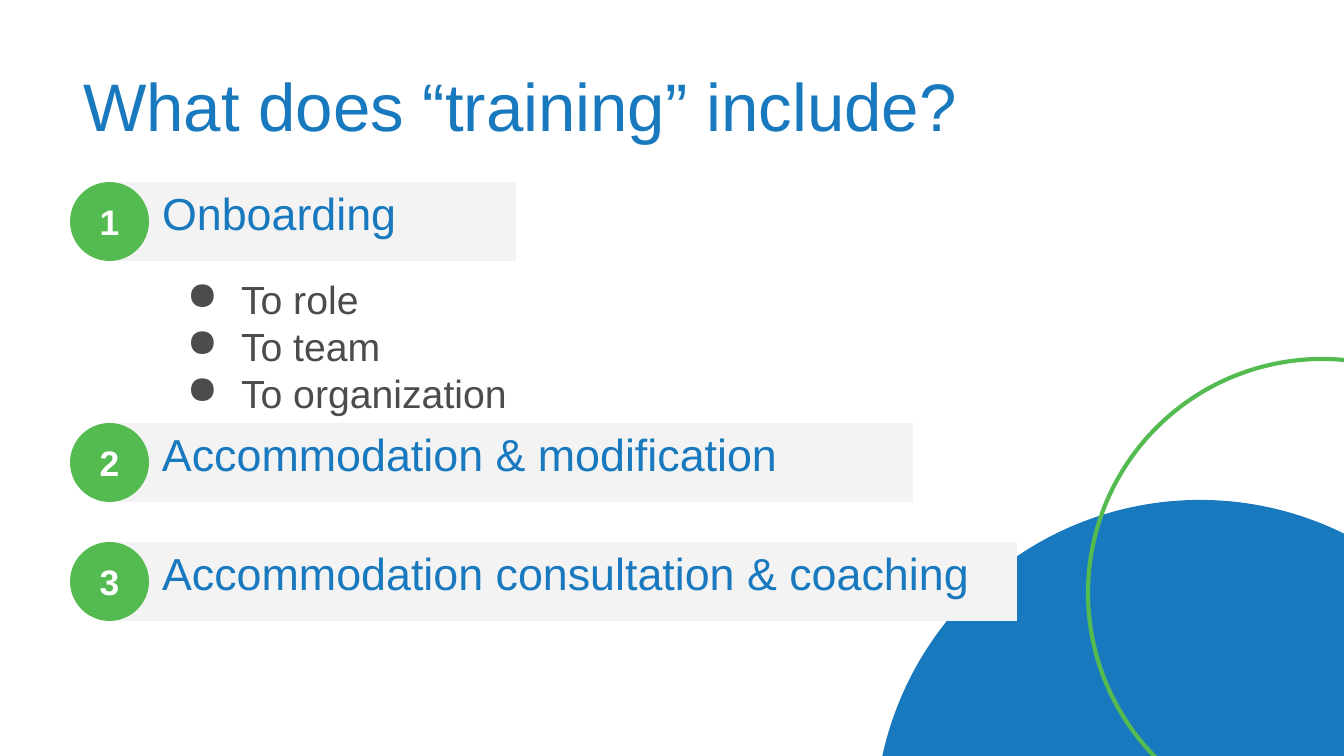
from lxml.etree import SubElement
from pptx import Presentation
from pptx.dml.color import RGBColor
from pptx.enum.shapes import MSO_SHAPE as Shape
from pptx.enum.text import MSO_ANCHOR as Anchor, PP_ALIGN as Align
from pptx.oxml.ns import qn
from pptx.util import Emu, Pt

PX = 9144000 / 1344
BLUE = RGBColor(0x19, 0x79, 0xBE)
GREEN = RGBColor(0x53, 0xBB, 0x50)
LIGHT = RGBColor(0xF3, 0xF3, 0xF3)
DARK = RGBColor(0x4C, 0x4C, 0x4E)
WHITE = RGBColor(0xFF, 0xFF, 0xFF)

BADGE = 79
ITEMS = [
    ("Onboarding", 182, 516),
    ("Accommodation & modification", 423, 913),
    ("Accommodation consultation & coaching", 542, 1017),
]
TOPICS = ["To role", "To team", "To organization"]


def px(n):
    """Turn pixels into EMU."""
    return Emu(round(n * PX))


def add_shape(s, kind, box, fill=None, line=None):
    """Add a flat preset shape with an optional fill and outline."""
    sp = s.shapes.add_shape(kind, *map(px, box))
    sp.shadow.inherit = False
    if fill is None:
        sp.fill.background()
    else:
        sp.fill.solid()
        sp.fill.fore_color.rgb = fill
    if line is None:
        sp.line.fill.background()
    else:
        sp.line.color.rgb = line
        sp.line.width = Pt(2.25)
    return sp


def add_bullet(p, color):
    """Give a paragraph a round bullet with a hanging indent."""
    pPr = p._p.get_or_add_pPr()
    pPr.set("marL", str(px(67)))
    pPr.set("indent", str(-px(54)))
    clr = SubElement(SubElement(pPr, qn("a:buClr")), qn("a:srgbClr"))
    clr.set("val", str(color))
    SubElement(pPr, qn("a:buChar")).set("char", "●")


def write(sp, lines, size, color, bold=False, align=Align.LEFT,
          anchor=Anchor.TOP, insets=(0, 0, 0, 0), spacing=None, bullet=False):
    """Write one paragraph per line into a shape."""
    tf = sp.text_frame
    tf.word_wrap = True
    tf.vertical_anchor = anchor
    tf.margin_left, tf.margin_top, tf.margin_right, tf.margin_bottom = map(px, insets)
    for i, line in enumerate(lines):
        p = tf.paragraphs[0] if i == 0 else tf.add_paragraph()
        p.alignment = align
        if spacing:
            p.line_spacing = spacing
        if bullet:
            add_bullet(p, color)
        r = p.add_run()
        r.text = line
        r.font.name = "Arial"
        r.font.size = Pt(size)
        r.font.bold = bold
        r.font.color.rgb = color


def add_text(s, box, lines, **fmt):
    """Add a text box."""
    write(s.shapes.add_textbox(*map(px, box)), lines, **fmt)


def add_item(s, number, label, top, right):
    """Add a numbered heading: a grey bar behind a round badge."""
    bar = add_shape(s, Shape.RECTANGLE, (108, top, right - 108, BADGE), LIGHT)
    write(bar, [label], size=24, color=BLUE, insets=(54, 4, 0, 0))
    badge = add_shape(s, Shape.OVAL, (70, top, BADGE, BADGE), GREEN)
    write(badge, [str(number)], size=19, color=WHITE, bold=True,
          align=Align.CENTER, anchor=Anchor.MIDDLE)


def main():
    """Build the slide and save it."""
    prs = Presentation()
    prs.slide_width, prs.slide_height = px(1344), px(756)
    s = prs.slides.add_slide(prs.slide_layouts[6])
    add_shape(s, Shape.OVAL, (875, 500, 650, 650), fill=BLUE)
    add_shape(s, Shape.OVAL, (1088, 359, 468, 468), line=GREEN)
    add_text(s, (70, 36, 1158, 147), ["What does “training” include?"], size=36,
             color=BLUE, anchor=Anchor.MIDDLE, insets=(13, 7, 13, 7), spacing=0.9)
    for number, (label, top, right) in enumerate(ITEMS, 1):
        add_item(s, number, label, top, right)
    add_text(s, (161, 262, 1020, 169), TOPICS, size=21, color=DARK,
             insets=(13, 13, 13, 13), bullet=True)
    prs.save("out.pptx")


if __name__ == "__main__":
    main()
